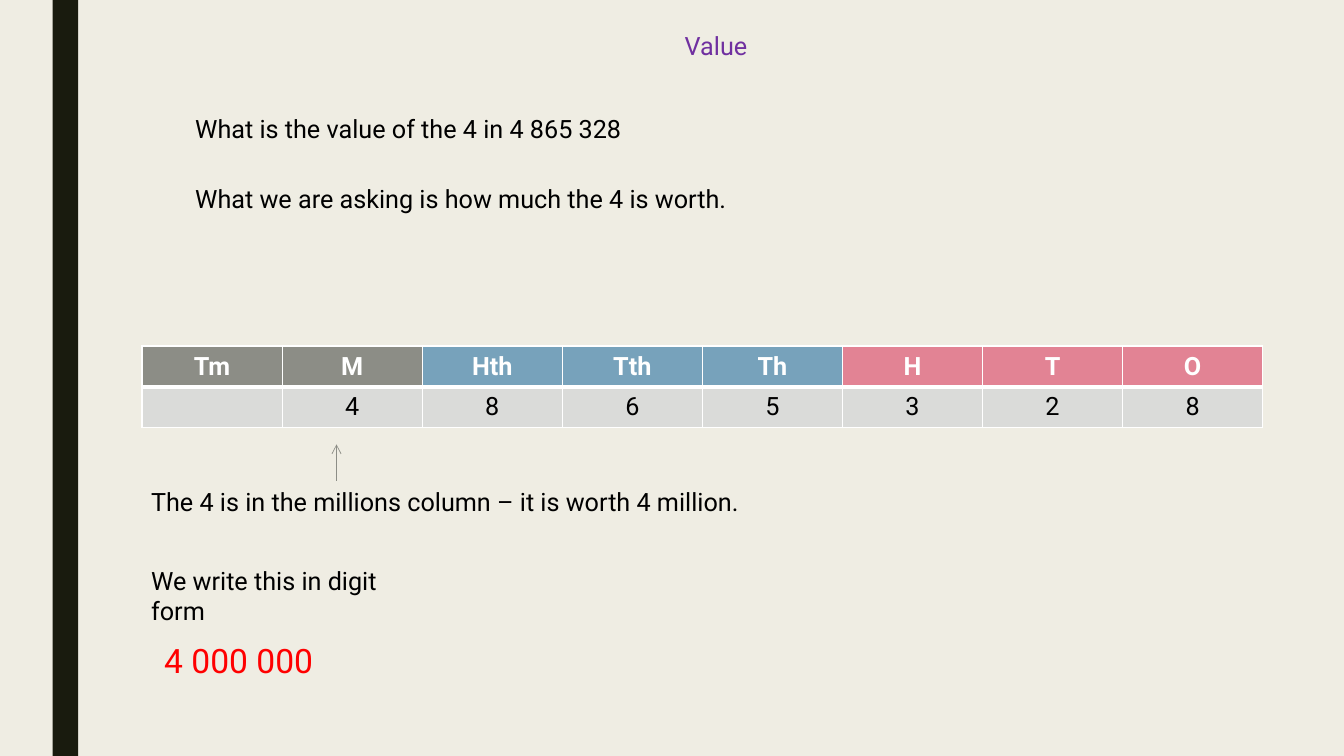
from lxml import etree
from pptx import Presentation
from pptx.dml.color import RGBColor
from pptx.enum.shapes import MSO_CONNECTOR, MSO_SHAPE
from pptx.enum.text import MSO_ANCHOR, MSO_AUTO_SIZE, PP_ALIGN
from pptx.oxml.ns import qn
from pptx.util import Cm, Pt

RECTANGLE = MSO_SHAPE.RECTANGLE
STRAIGHT = MSO_CONNECTOR.STRAIGHT
TOP, MIDDLE = MSO_ANCHOR.TOP, MSO_ANCHOR.MIDDLE
CENTER = PP_ALIGN.CENTER
NO_AUTOFIT = MSO_AUTO_SIZE.NONE

FONT = "Roboto"
BLACK, WHITE, RED, PURPLE = "000000", "FFFFFF", "FF0000", "7030A0"
GRAY, BLUE, PINK, PALE = "8C8D86", "77A2BB", "E28394", "DADBD9"


def color(hex_string):
    return RGBColor.from_string(hex_string)


def write(paragraph, text, hex_string, size=18, bold=False):
    paragraph.text = text
    paragraph.font.name = FONT
    paragraph.font.size = Pt(size)
    paragraph.font.bold = bold
    paragraph.font.color.rgb = color(hex_string)


presentation = Presentation()
presentation.slide_width, presentation.slide_height = Cm(33.87), Cm(19.05)
slide = presentation.slides.add_slide(presentation.slide_layouts[5])
slide.background.fill.solid()
slide.background.fill.fore_color.rgb = color("EFEDE3")

# Side bar
bar = slide.shapes.add_shape(RECTANGLE, Cm(1.33), 0, Cm(0.64), presentation.slide_height)
bar.shadow.inherit = False
bar.fill.solid()
bar.fill.fore_color.rgb = color("191B0E")
bar.line.fill.background()

# Title
title = slide.shapes.title
title.left, title.top, title.width, title.height = Cm(5.28), Cm(0.64), Cm(25.53), Cm(1.02)
title.text_frame.auto_size = NO_AUTOFIT
title.text_frame.vertical_anchor = TOP
write(title.text_frame.paragraphs[0], "Value", PURPLE)
title.text_frame.paragraphs[0].alignment = CENTER

# Place value table
place_values = [
    ("Tm", "", GRAY), ("M", "4", GRAY),
    ("Hth", "8", BLUE), ("Tth", "6", BLUE), ("Th", "5", BLUE),
    ("H", "3", PINK), ("T", "2", PINK), ("O", "8", PINK),
]
table = slide.shapes.add_table(
    2, len(place_values), Cm(3.58), Cm(8.72), Cm(28.24), Cm(2.06)
).table
for column, (heading, digit, heading_fill) in enumerate(place_values):
    for row, (text, fill, text_color) in enumerate(
        [(heading, heading_fill, WHITE), (digit, PALE, BLACK)]
    ):
        cell = table.cell(row, column)
        cell.vertical_anchor = MIDDLE
        paragraph = cell.text_frame.paragraphs[0]
        write(paragraph, text, text_color, bold=row == 0)
        paragraph.alignment = CENTER
        thick_side = "lnB" if row == 0 else "lnT"
        for side in ("lnL", "lnR", "lnT", "lnB"):
            width = Pt(3 if side == thick_side else 1)
            border = etree.SubElement(cell._tc.get_or_add_tcPr(), qn(f"a:{side}"), w=str(width))
            border_fill = etree.SubElement(border, qn("a:solidFill"))
            etree.SubElement(border_fill, qn("a:srgbClr"), val=WHITE)
        cell.fill.solid()
        cell.fill.fore_color.rgb = color(fill)

# Arrow to the millions column
arrow = slide.shapes.add_connector(STRAIGHT, Cm(8.48), Cm(12.12), Cm(8.48), Cm(11.2))
arrow.line.color.rgb = color(GRAY)
arrow.line.width = Pt(0.5)
etree.SubElement(arrow.line._get_or_add_ln(), qn("a:tailEnd"), type="arrow")
etree.SubElement(arrow._element.spPr, qn("a:effectLst"))

# Question and explanation
statements = [
    ("What is the value of the 4 in 4 865 328", 4.67, 2.74, 11.46, BLACK, 18, False),
    ("What we are asking is how much the 4 is worth.", 4.67, 4.5, 14.05, BLACK, 18, False),
    ("The 4 is in the millions column – it is worth 4 million.", 3.56, 12.12, 15.39, BLACK, 18, False),
    ("We write this in digit form", 3.56, 14.12, 7.2, BLACK, 18, True),
    ("4 000 000", 3.89, 16, 4.32, RED, 24, False),
]
for text, left, top, width, text_color, size, wraps in statements:
    box = slide.shapes.add_textbox(Cm(left), Cm(top), Cm(width), Cm(1.02))
    box.text_frame.word_wrap = wraps
    write(box.text_frame.paragraphs[0], text, text_color, size)

presentation.save("out.pptx")
